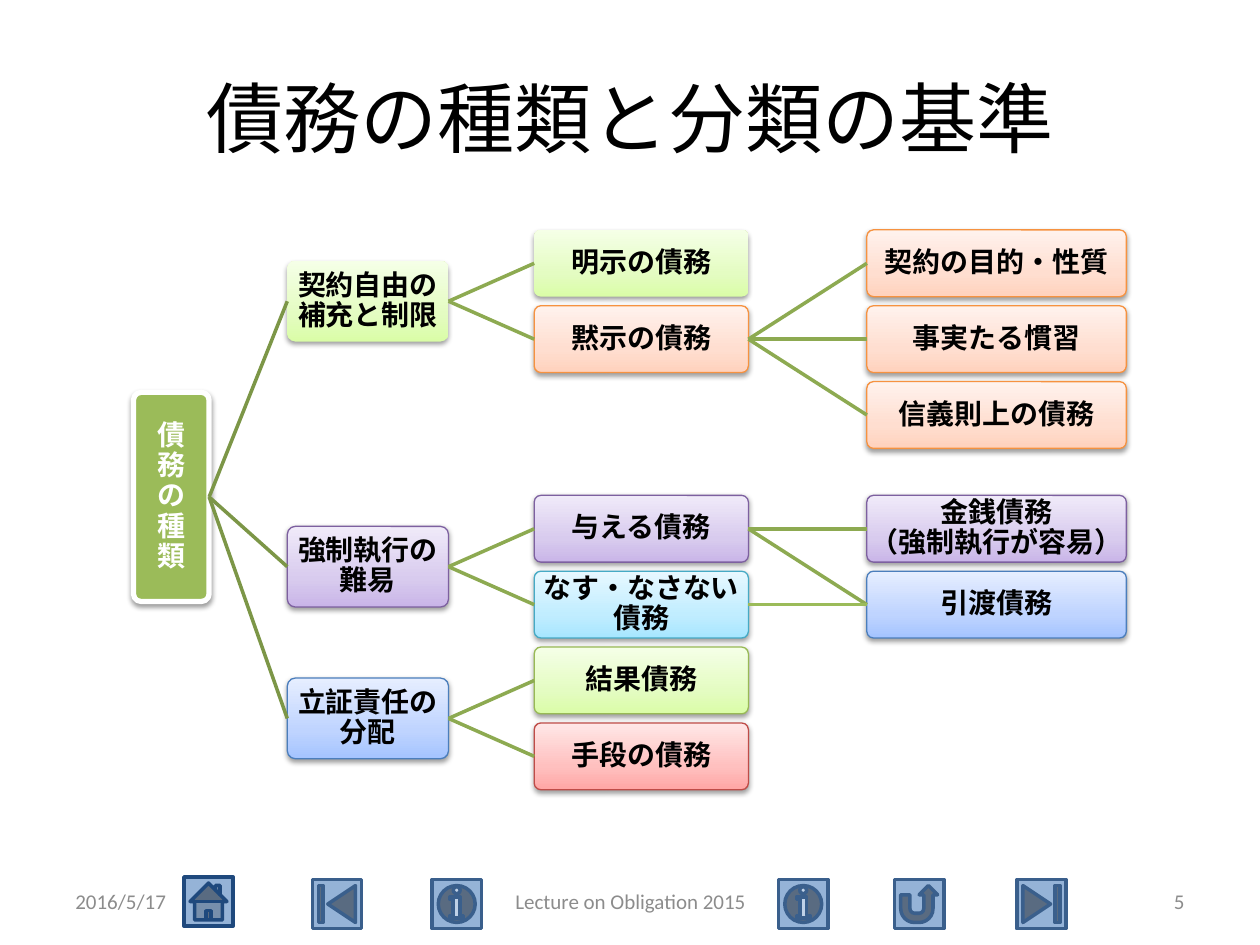
from lxml import etree
from pptx import Presentation
from pptx.dml.color import RGBColor
from pptx.enum.shapes import MSO_CONNECTOR, MSO_SHAPE
from pptx.enum.text import MSO_ANCHOR, PP_ALIGN
from pptx.oxml import parse_xml
from pptx.oxml.ns import nsdecls, qn
from pptx.util import Inches, Pt

LEFT, CENTER, RIGHT = PP_ALIGN.LEFT, PP_ALIGN.CENTER, PP_ALIGN.RIGHT
MIDDLE = MSO_ANCHOR.MIDDLE
ROUNDED, STRAIGHT = MSO_SHAPE.ROUNDED_RECTANGLE, MSO_CONNECTOR.STRAIGHT

# ---- Content ----
TITLE = "債務の種類と分類の基準"
COLORS = {
    "black": "000000", "white": "FFFFFF", "gray": "8C8C8C", "root": "9BBB59",
    "trunk": "7C9647", "branch": "8DAA51",
    "button": "95B3D7", "button line": "3A5F8C", "home line": "1F497D",
}
# Three gradient stops from bottom to top, then the outline
PALETTES = {
    "plain green": ("DAFDA7", "E4FCC2", "F5FFE7", None),
    "green": ("DAFDA7", "E4FCC2", "F5FFE7", "98B955"),
    "orange": ("FFD2BD", "FFDED0", "FFF2ED", "F69240"),
    "purple": ("C9B5E8", "D8CBEE", "F0EAF9", "7D60A0"),
    "blue": ("A4C4FF", "BFD4FF", "E6EEFF", "4B7EBC"),
    "cyan": ("A7E6FF", "C1EDFF", "E7F8FF", "46AAC5"),
    "red": ("FFA6A5", "FFC0BF", "FFE7E7", "BF4C48"),
}
# Left, width and height of the boxes in each column
COLUMNS = [(1.06, 0.6, 1.66), (2.28, 1.28, 0.64), (4.24, 1.7, 0.53), (6.88, 2.06, 0.53)]
FIRST_ROW, ROW_STEP = 2.09, 0.602
# Key: column, row, text, palette
NODES = {
    "root": (0, 3.08, "債\n務\nの\n種\n類", None),
    "freedom": (1, 0.5, "契約自由の補充と制限", "plain green"),
    "enforcement": (1, 4, "強制執行の難易", "purple"),
    "proof": (1, 6, "立証責任の分配", "blue"),
    "express": (2, 0, "明示の債務", "plain green"),
    "implied": (2, 1, "黙示の債務", "orange"),
    "giving": (2, 3.5, "与える債務", "purple"),
    "doing": (2, 4.5, "なす・なさない\n債務", "cyan"),
    "result": (2, 5.5, "結果債務", "green"),
    "means": (2, 6.5, "手段の債務", "red"),
    "purpose": (3, 0, "契約の目的・性質", "orange"),
    "custom": (3, 1, "事実たる慣習", "orange"),
    "good faith": (3, 2, "信義則上の債務", "orange"),
    "money": (3, 3.5, "金銭債務\n（強制執行が容易）", "purple"),
    "delivery": (3, 4.5, "引渡債務", "blue"),
}
CHILDREN = {
    "root": ["freedom", "enforcement", "proof"],
    "freedom": ["express", "implied"],
    "implied": ["purpose", "custom", "good faith"],
    "enforcement": ["giving", "doing"],
    "giving": ["money", "delivery"],
    "proof": ["result", "means"],
    "doing": ["delivery"],
}
LINK_STYLES = {"root": ("trunk", 2), "doing": ("root", 1.5)}
# Button shape, left, top, outline
BUTTONS = [
    (MSO_SHAPE.ACTION_BUTTON_BEGINNING, 2.48, 6.98, "button line"),
    (MSO_SHAPE.ACTION_BUTTON_END, 8.07, 6.98, "button line"),
    (MSO_SHAPE.ACTION_BUTTON_RETURN, 7.1, 6.98, "button line"),
    (MSO_SHAPE.ACTION_BUTTON_INFORMATION, 6.18, 6.98, "button line"),
    (MSO_SHAPE.ACTION_BUTTON_HOME, 1.46, 6.96, "home line"),
    (MSO_SHAPE.ACTION_BUTTON_INFORMATION, 3.43, 6.98, "button line"),
]
# Text, left, width, alignment
FOOTERS = [
    ("2016/5/17", 0.5, 2.33, LEFT),
    ("Lecture on Obligation 2015", 3.42, 3.17, CENTER),
    ("5", 7.17, 2.33, RIGHT),
]


def rgb(name):
    return RGBColor.from_string(COLORS.get(name, name))


def write(box, text, size=16, color="black", bold=False, align=CENTER, spacing=None, inset=None):
    frame = box.text_frame
    frame.word_wrap = True
    frame.vertical_anchor = MIDDLE
    if inset is not None:
        frame.margin_left = frame.margin_right = Inches(inset)
        frame.margin_top = frame.margin_bottom = Inches(inset)
    para = frame.paragraphs[0]
    para.text = text.replace("\n", "\v")
    para.alignment = align
    if spacing:
        para.line_spacing = spacing
    for span in para.runs:
        span.font.name = "Calibri"
        span.font.size = Pt(size)
        span.font.bold = bold
        span.font.color.rgb = rgb(color)


def add_box(page, kind, place, fill=None, line=None, line_width=0.75):
    box = page.shapes.add_shape(kind, *map(Inches, place))
    box.shadow.inherit = False
    if fill:
        box.fill.solid()
        box.fill.fore_color.rgb = rgb(fill)
    if line:
        box.line.color.rgb = rgb(line)
        box.line.width = Pt(line_width)
    else:
        box.line.fill.background()
    return box


def add_gradient(box, stops):
    box.fill.gradient()
    box.fill.gradient_angle = 90
    stop_list = box._element.spPr.find(".//" + qn("a:gsLst"))
    stop_list.clear()
    for position, color in zip((0, 35, 100), stops):
        stop_list.append(parse_xml(
            f'<a:gs {nsdecls("a")} pos="{position * 1000}"><a:srgbClr val="{color}"/></a:gs>'))


def add_shadow(box):
    box._element.spPr.find(qn("a:effectLst")).append(parse_xml(
        f'<a:outerShdw {nsdecls("a")} blurRad="{Pt(3.1)}" dist="{Pt(1.6)}" dir="5400000" '
        'rotWithShape="0"><a:srgbClr val="000000"><a:alpha val="38000"/></a:srgbClr></a:outerShdw>'))


def row_center(row):
    return FIRST_ROW + ROW_STEP * row


def add_node(page, column, row, text, palette):
    left, width, height = COLUMNS[column]
    place = (left, row_center(row) - height / 2, width, height)
    if palette:
        *stops, outline = PALETTES[palette]
        box = add_box(page, ROUNDED, place, line=outline)
        add_gradient(box, stops)
    else:
        box = add_box(page, ROUNDED, place, fill="root", line="white", line_width=3)
    box.adjustments[0] = 0.1
    add_shadow(box)
    write(box, text, color="black" if palette else "white", bold=True, spacing=0.9, inset=0.01)


def add_link(page, parent, child):
    color, width = LINK_STYLES.get(parent, ("branch", 2))
    column, row = NODES[parent][:2]
    next_column, next_row = NODES[child][:2]
    left, box_width, _ = COLUMNS[column]
    ends = (left + box_width, row_center(row), COLUMNS[next_column][0], row_center(next_row))
    link = page.shapes.add_connector(STRAIGHT, *map(Inches, ends))
    link.line.color.rgb = rgb(color)
    link.line.width = Pt(width)
    etree.SubElement(link._element.spPr, qn("a:effectLst"))


def main():
    deck = Presentation()
    deck.slide_width, deck.slide_height = Inches(10), Inches(7.5)
    page = deck.slides.add_slide(deck.slide_layouts[5])

    # Title
    title = page.shapes.title
    title.left, title.top, title.width, title.height = map(Inches, (0.5, 0.3, 9, 1.25))
    write(title, TITLE, size=44)

    # Navigation buttons and footer
    for kind, left, top, line in BUTTONS:
        add_box(page, kind, (left, top, 0.39, 0.39), fill="button", line=line, line_width=2)
    for text, left, width, align in FOOTERS:
        box = page.shapes.add_textbox(*map(Inches, (left, 6.95, width, 0.4)))
        write(box, text, size=12, color="gray", align=align)

    # Tree of obligations
    for node in NODES.values():
        add_node(page, *node)
    for parent, children in CHILDREN.items():
        for child in children:
            add_link(page, parent, child)

    deck.save("out.pptx")


if __name__ == "__main__":
    main()
